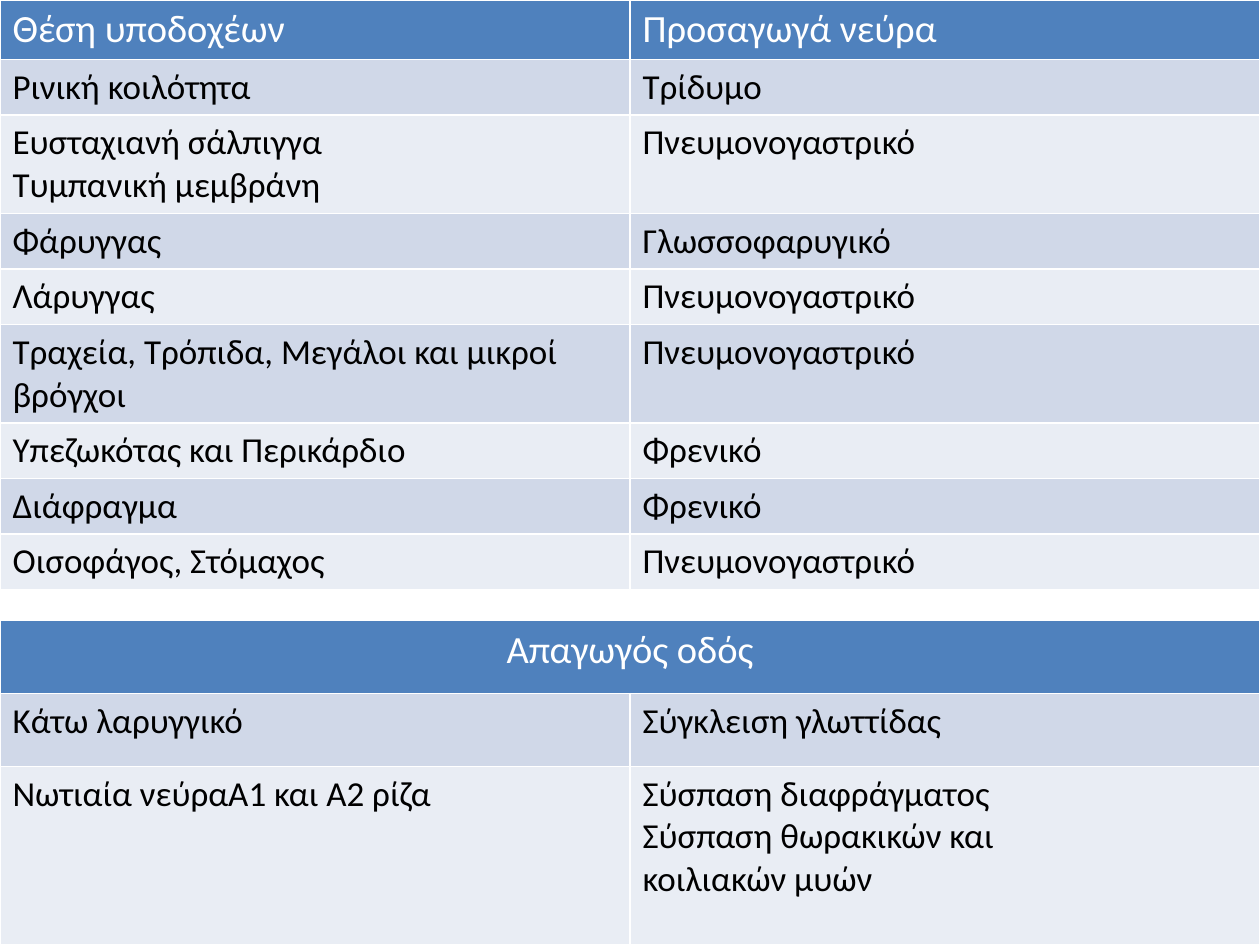
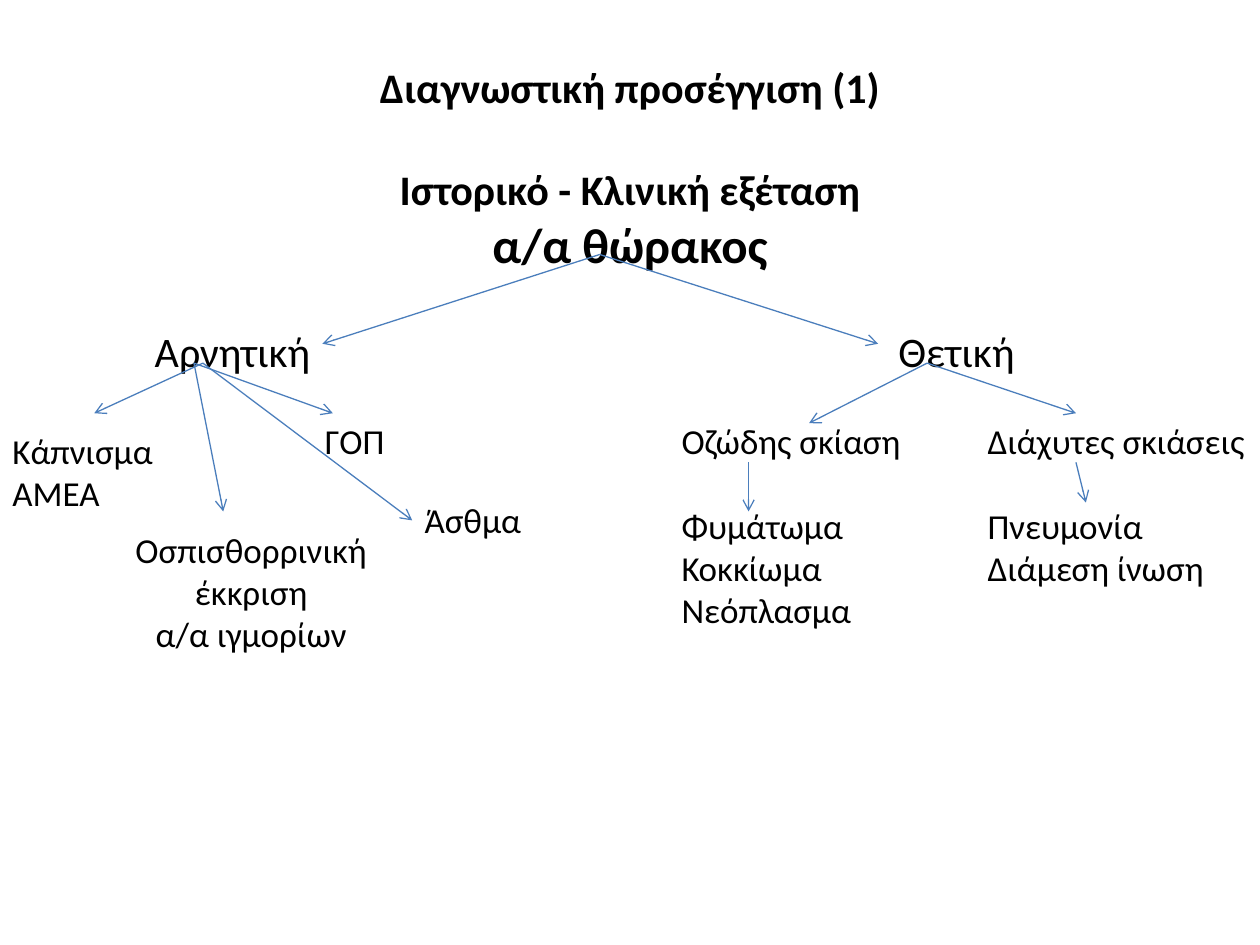
from lxml import etree
from pptx import Presentation
from pptx.dml.color import RGBColor
from pptx.enum.shapes import MSO_CONNECTOR
from pptx.enum.text import MSO_ANCHOR, MSO_AUTO_SIZE, PP_ALIGN
from pptx.oxml.ns import qn
from pptx.util import Cm, Pt

LEFT, CENTER = PP_ALIGN.LEFT, PP_ALIGN.CENTER
STRAIGHT = MSO_CONNECTOR.STRAIGHT
TOP = MSO_ANCHOR.TOP
NO_AUTOFIT = MSO_AUTO_SIZE.NONE
LEFT_SIDE = 1

FONT = "Calibri"
BLACK = RGBColor(0x00, 0x00, 0x00)
WHITE = RGBColor(0xFF, 0xFF, 0xFF)
HEADER_BLUE = RGBColor(0x4F, 0x81, 0xBD)
ARROW_BLUE = RGBColor(0x4B, 0x7E, 0xBC)
BANDS = [RGBColor(0xD0, 0xD8, 0xE8), RGBColor(0xE9, 0xED, 0xF4)]

SLIDE_WIDTH, SLIDE_HEIGHT = 25.4, 19.05
TITLE_ONLY, BLANK = 5, 6

RECEPTORS = [
    ("Θέση υποδοχέων", "Προσαγωγά νεύρα"),
    ("Ρινική κοιλότητα", "Τρίδυμο"),
    ("Ευσταχιανή σάλπιγγα\nΤυμπανική μεμβράνη", "Πνευμονογαστρικό"),
    ("Φάρυγγας", "Γλωσσοφαρυγικό"),
    ("Λάρυγγας", "Πνευμονογαστρικό"),
    ("Τραχεία, Τρόπιδα, Μεγάλοι και μικροί βρόγχοι", "Πνευμονογαστρικό"),
    ("Υπεζωκότας και Περικάρδιο", "Φρενικό"),
    ("Διάφραγμα", "Φρενικό"),
    ("Οισοφάγος, Στόμαχος", "Πνευμονογαστρικό"),
]
ONE_LINE, TWO_LINES = 1.12, 1.9
RECEPTOR_HEIGHTS = [ONE_LINE, ONE_LINE, TWO_LINES, ONE_LINE, ONE_LINE,
                    TWO_LINES, ONE_LINE, ONE_LINE, ONE_LINE]

EFFERENT_PATH = [
    ("Απαγωγός οδός", ""),
    ("Κάτω λαρυγγικό", "Σύγκλειση γλωττίδας"),
    ("Νωτιαία νεύραΑ1 και Α2 ρίζα",
     "Σύσπαση διαφράγματος\nΣύσπαση θωρακικών και\nκοιλιακών μυών"),
]
EFFERENT_HEIGHTS = [1.47, 1.47, 3.6]

TITLE = "Διαγνωστική προσέγγιση (1)"
EXAMINATION = "Ιστορικό - Κλινική εξέταση\nα/α θώρακος"

# text, (left, top, width, height), size
RESULTS = [
    ("Αρνητική", (2.87, 6.43, 3.7, 1.28), 24),
    ("Θετική", (17.86, 6.43, 2.9, 1.28), 24),
]
CAUSES = [
    ("Κάπνισμα\nΑΜΕΑ", (0, 8.53, 3.38, 1.96), 20),
    ("ΓΟΠ", (6.3, 8.33, 1.73, 1.12), 20),
]
SECRETION = ("Οσπισθορρινική\nέκκριση\nα/α ιγμορίων", (2.46, 10.52, 5.21, 2.82), 20)
ASTHMA = ("Άσθμα", (8.31, 9.93, 2.49, 1.12), 20)
SHADOWS = [
    ("Οζώδης σκίαση\nΦυμάτωμα\nΚοκκίωμα\nΝεόπλασμα", (13.49, 8.33, 4.98, 4.52), 20),
    ("Διάχυτες σκιάσεις\nΠνευμονία\nΔιάμεση ίνωση", (19.66, 8.33, 5.74, 3.68), 20),
]
SHADOW_GAP = 24.4

# start point, end points
ARROW_FANS = [
    ((12.09, 5.13), [(6.5, 6.93), (17.7, 6.93)]),
    ((4.09, 7.32), [(1.9, 8.33)]),
    ((3.91, 7.32), [(4.5, 10.31), (6.71, 8.33)]),
    ((18.69, 7.32), [(16.31, 8.53), (21.69, 8.33)]),
    ((15.09, 9.32), [(15.09, 10.31)]),
    ((21.69, 9.32), [(21.89, 10.13)]),
]
ASTHMA_ARROW = ((4.09, 7.32), (8.31, 10.49))


def format_text(text_frame, size, color=BLACK, bold=False, alignment=LEFT):
    for paragraph in text_frame.paragraphs:
        paragraph.alignment = alignment
        for run in paragraph.runs:
            run.font.name = FONT
            run.font.size = Pt(size)
            run.font.bold = bold
            run.font.color.rgb = color


def add_banded_table(slide, rows, heights, top):
    frame = slide.shapes.add_table(len(rows), 2, 0, Cm(top), Cm(SLIDE_WIDTH), Cm(sum(heights)))
    table = frame.table
    for row_index, (texts, height) in enumerate(zip(rows, heights)):
        is_header = row_index == 0
        table.rows[row_index].height = Cm(height)
        for column_index, text in enumerate(texts):
            cell = table.cell(row_index, column_index)
            cell.text_frame.text = text
            cell.fill.solid()
            cell.fill.fore_color.rgb = HEADER_BLUE if is_header else BANDS[(row_index - 1) % 2]
            format_text(cell.text_frame, 22 if is_header else 20, WHITE if is_header else BLACK)
    return table


def add_label(slide, text, box, size, bold=False, alignment=LEFT):
    label = slide.shapes.add_textbox(*(Cm(length) for length in box))
    label.text_frame.word_wrap = False
    label.text_frame.text = text
    format_text(label.text_frame, size, bold=bold, alignment=alignment)
    return label


def add_arrow(slide, start, end):
    points = [Cm(length) for length in (*start, *end)]
    arrow = slide.shapes.add_connector(STRAIGHT, *points)
    arrow.line.color.rgb = ARROW_BLUE
    arrow.line.width = Pt(0.75)
    properties = arrow.line._get_or_add_ln()
    etree.SubElement(properties, qn("a:tailEnd"), type="arrow")
    etree.SubElement(properties.getparent(), qn("a:effectLst"))
    return arrow


def build_nerves_slide(presentation):
    slide = presentation.slides.add_slide(presentation.slide_layouts[BLANK])
    efferent_top = SLIDE_HEIGHT - sum(EFFERENT_HEIGHTS)
    efferent = add_banded_table(slide, EFFERENT_PATH, EFFERENT_HEIGHTS, efferent_top)
    heading = efferent.cell(0, 0)
    heading.merge(efferent.cell(0, 1))
    heading.text_frame.paragraphs[0].alignment = CENTER
    add_banded_table(slide, RECEPTORS, RECEPTOR_HEIGHTS, 0)


def build_diagnosis_slide(presentation):
    slide = presentation.slides.add_slide(presentation.slide_layouts[TITLE_ONLY])
    title = slide.shapes.title
    title.left, title.top = 0, Cm(1.12)
    title.width, title.height = Cm(SLIDE_WIDTH), Cm(1.28)
    title.text_frame.text = TITLE
    title.text_frame.vertical_anchor = TOP
    title.text_frame.auto_size = NO_AUTOFIT
    format_text(title.text_frame, 24, bold=True, alignment=CENTER)

    examination = add_label(slide, EXAMINATION, (0, 3.18, SLIDE_WIDTH, 2.5), 24, True, CENTER)
    examination.text_frame.paragraphs[1].runs[0].font.size = Pt(28)

    for label in RESULTS + CAUSES:
        add_label(slide, *label)
    add_label(slide, *SECRETION, alignment=CENTER)
    asthma = add_label(slide, *ASTHMA)
    for shadow in SHADOWS:
        findings = add_label(slide, *shadow)
        findings.text_frame.paragraphs[1].space_before = Pt(SHADOW_GAP)

    for start, ends in ARROW_FANS:
        for end in ends:
            add_arrow(slide, start, end)
    add_arrow(slide, *ASTHMA_ARROW).end_connect(asthma, LEFT_SIDE)


def main():
    presentation = Presentation()
    presentation.slide_width, presentation.slide_height = Cm(SLIDE_WIDTH), Cm(SLIDE_HEIGHT)
    build_nerves_slide(presentation)
    build_diagnosis_slide(presentation)
    presentation.save("out.pptx")


if __name__ == "__main__":
    main()
